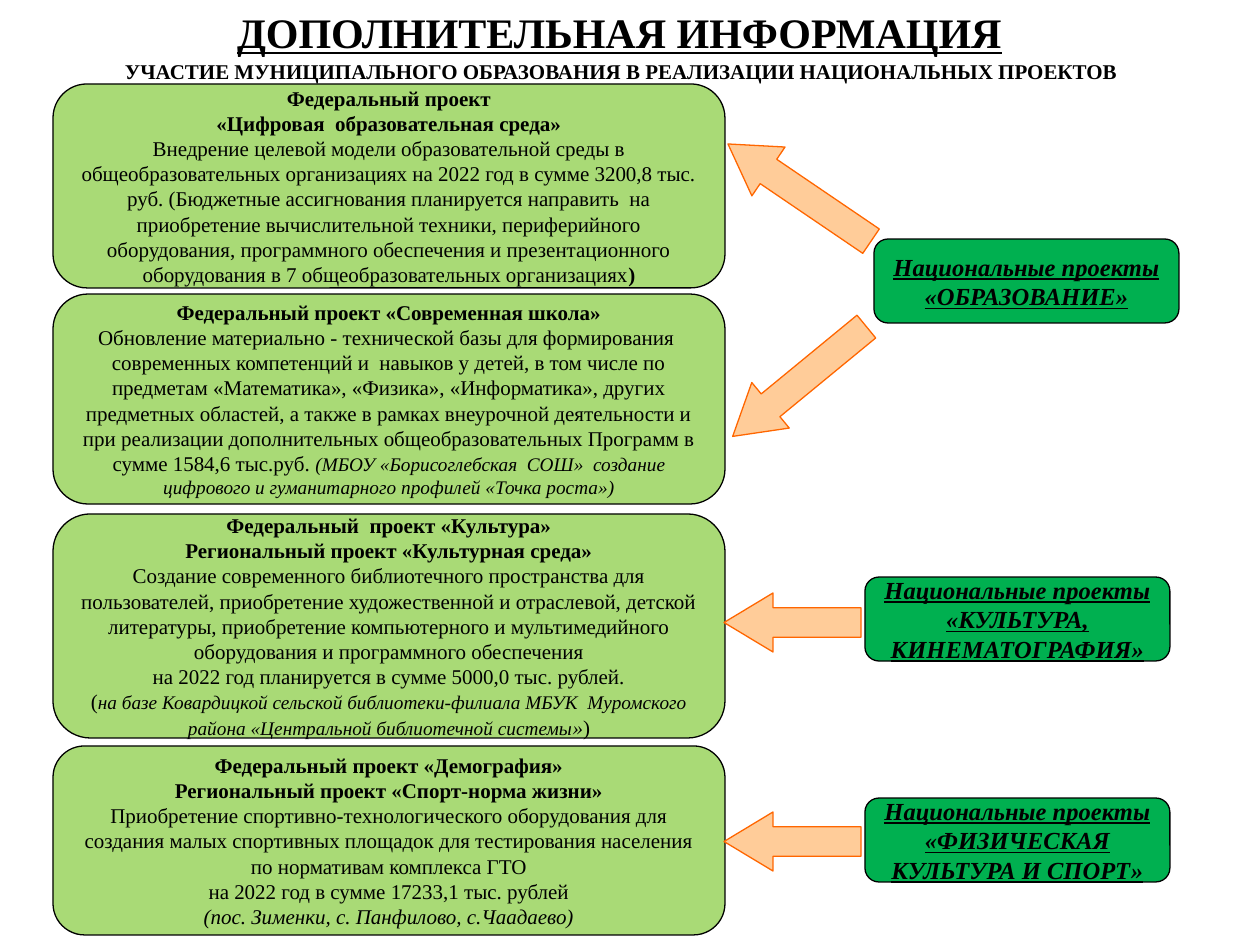
from lxml.etree import SubElement
from pptx import Presentation
from pptx.dml.color import RGBColor
from pptx.enum.shapes import MSO_SHAPE
from pptx.enum.text import MSO_ANCHOR, PP_ALIGN
from pptx.oxml.ns import qn
from pptx.util import Emu, Pt

PX = 914400 / 126
FONT = "Times New Roman"
COLORS = {"text": "000000", "project": "92D050", "national": "00B050",
          "border": "000000", "arrow": "FFCC99", "arrow_line": "FF6600"}
BOLD = {"bold": True}
NOTE = {"italic": True, "size": 11}

TITLE = [["ДОПОЛНИТЕЛЬНАЯ ИНФОРМАЦИЯ"]]
SUBTITLE = [["УЧАСТИЕ МУНИЦИПАЛЬНОГО ОБРАЗОВАНИЯ В РЕАЛИЗАЦИИ НАЦИОНАЛЬНЫХ ПРОЕКТОВ"]]

# Each paragraph is a list of runs: plain text, or (text, format)
PROJECT_LEFT, PROJECT_WIDTH = 53, 672
PROJECTS = [  # top, height, paragraphs
    (84, 204, [
        [("Федеральный проект", BOLD)],
        [("«Цифровая  образовательная среда»", BOLD)],
        ["Внедрение целевой модели образовательной среды в общеобразовательных "
         "организациях на 2022 год в сумме 3200,8 тыс. руб. (Бюджетные ассигнования "
         "планируется направить  на приобретение вычислительной техники, периферийного "
         "оборудования, программного обеспечения и презентационного оборудования "
         "в 7 общеобразовательных организациях", (")", BOLD)],
    ]),
    (294, 210, [
        [("Федеральный проект «Современная школа»", BOLD)],
        ["Обновление материально - технической базы для формирования  современных "
         "компетенций и  навыков у детей, в том числе по предметам «Математика», "
         "«Физика», «Информатика», других предметных областей, а также в рамках "
         "внеурочной деятельности и при реализации дополнительных общеобразовательных "
         "Программ в сумме 1584,6 тыс.руб. ",
         ("(МБОУ «Борисоглебская  СОШ»  создание цифрового и гуманитарного "
          "профилей «Точка роста»)", NOTE)],
    ]),
    (514, 224, [
        [("Федеральный  проект «Культура»", BOLD)],
        [("Региональный проект «Культурная среда»", BOLD)],
        ["Создание современного библиотечного пространства для пользователей, "
         "приобретение художественной и отраслевой, детской литературы, приобретение "
         "компьютерного и мультимедийного оборудования и программного обеспечения"],
        ["на 2022 год планируется в сумме 5000,0 тыс. рублей."],
        ["(", ("на базе Ковардицкой сельской библиотеки-филиала МБУК  Муромского района "
               "«Центральной библиотечной системы", NOTE), ("»", {"italic": True}), ")"],
    ]),
    (746, 189, [
        [("Федеральный проект «Демография»", BOLD)],
        [("Региональный проект «Спорт-норма жизни»", BOLD)],
        ["Приобретение спортивно-технологического оборудования для создания малых "
         "спортивных площадок для тестирования населения по нормативам комплекса ГТО"],
        ["на 2022 год в сумме 17233,1 тыс. рублей"],
        [("(пос. Зименки, с. Панфилово, с.Чаадаево)", {"italic": True})],
    ]),
]

NATIONAL_SIZE = (305, 84)
NATIONAL_HEADING = "Национальные проекты"
NATIONAL_PROJECTS = [  # left, top, name
    (874, 239, "«ОБРАЗОВАНИЕ»"),
    (865, 577, "«КУЛЬТУРА, КИНЕМАТОГРАФИЯ»"),
    (865, 798, "«ФИЗИЧЕСКАЯ КУЛЬТУРА И СПОРТ»"),
]

ARROW_HEIGHT = 59
ARROWS = [  # left, top, width, rotation
    (713, 163, 173, 214.2),
    (713, 352, 173, 140.6),
    (724, 593, 137, 180),
    (724, 812, 137, 180),
]


def px(*lengths):
    return [Emu(round(length * PX)) for length in lengths]


def color(name):
    return RGBColor.from_string(COLORS[name])


def write_text(shape, paragraphs, size=12, bold=False, italic=False,
               underline=False, anchor=MSO_ANCHOR.MIDDLE):
    frame = shape.text_frame
    frame.word_wrap = True
    frame.vertical_anchor = anchor
    for index, runs in enumerate(paragraphs):
        paragraph = frame.add_paragraph() if index else frame.paragraphs[0]
        paragraph.alignment = PP_ALIGN.CENTER
        for item in runs:
            text, own = (item, {}) if isinstance(item, str) else item
            run = paragraph.add_run()
            run.text = text
            font = run.font
            font.name = FONT
            font.size = Pt(own.get("size", size))
            font.bold = own.get("bold", bold)
            font.italic = own.get("italic", italic)
            font.underline = underline
            font.color.rgb = color("text")


def add_text(slide, box, paragraphs, **text_format):
    write_text(slide.shapes.add_textbox(*px(*box)), paragraphs, **text_format)


def add_shape(slide, kind, box, fill, line, opacity=100):
    shape = slide.shapes.add_shape(kind, *px(*box))
    shape.shadow.inherit = False
    shape.fill.solid()
    shape.fill.fore_color.rgb = color(fill)
    if opacity < 100:
        fill_color = shape.fill._xPr.find(qn("a:solidFill"))[0]
        SubElement(fill_color, qn("a:alpha"), val=str(opacity * 1000))
    shape.line.color.rgb = color(line)
    shape.line.width = Pt(0.75)
    return shape


def main():
    presentation = Presentation()
    presentation.slide_width, presentation.slide_height = px(1260, 945)
    slide = presentation.slides.add_slide(presentation.slide_layouts[6])

    add_text(slide, (84, 0, 1071, 63), TITLE, size=24, bold=True,
             underline=True, anchor=MSO_ANCHOR.TOP)
    add_text(slide, (44, 47, 1155, 48), SUBTITLE, bold=True)

    for top, height, paragraphs in PROJECTS:
        project = add_shape(slide, MSO_SHAPE.FLOWCHART_ALTERNATE_PROCESS,
                            (PROJECT_LEFT, top, PROJECT_WIDTH, height),
                            "project", "border", opacity=78)
        write_text(project, paragraphs)

    for left, top, name in NATIONAL_PROJECTS:
        national = add_shape(slide, MSO_SHAPE.FLOWCHART_ALTERNATE_PROCESS,
                             (left, top, *NATIONAL_SIZE), "national", "border")
        write_text(national, [[NATIONAL_HEADING], [name]], size=14,
                   bold=True, italic=True, underline=True)

    for left, top, width, rotation in ARROWS:
        arrow = add_shape(slide, MSO_SHAPE.RIGHT_ARROW,
                          (left, top, width, ARROW_HEIGHT), "arrow", "arrow_line")
        arrow.adjustments[0] = 0.5
        arrow.adjustments[1] = 0.83
        arrow.rotation = rotation

    presentation.save("out.pptx")


if __name__ == "__main__":
    main()
